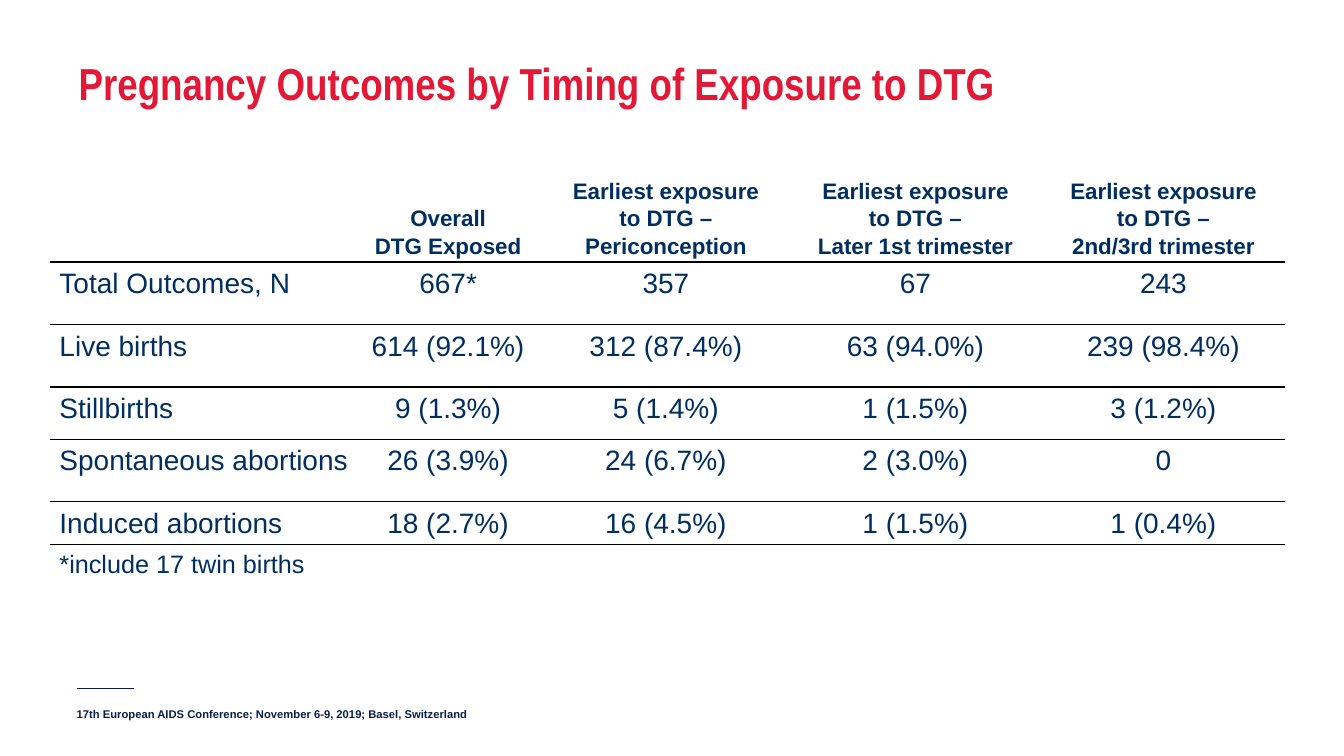
from lxml import etree
from pptx import Presentation
from pptx.dml.color import RGBColor
from pptx.enum.shapes import MSO_CONNECTOR
from pptx.enum.text import MSO_ANCHOR, PP_ALIGN
from pptx.oxml.ns import qn
from pptx.util import Emu, Pt

STRAIGHT = MSO_CONNECTOR.STRAIGHT
TOP, BOTTOM = MSO_ANCHOR.TOP, MSO_ANCHOR.BOTTOM
LEFT, CENTER = PP_ALIGN.LEFT, PP_ALIGN.CENTER

TITLE_ONLY_LAYOUT = 5
NO_STYLE_NO_GRID = "{2D5ABB26-0587-4C30-8999-92F81FD0307C}"
RED, BLUE, NAVY, BLACK = "E31836", "002F5F", "071D49", "000000"

COLUMN_WIDTHS = [301, 187, 245, 250, 242]
ROW_HEIGHTS = [118, 62, 62, 52, 62, 38, 66]
HEADINGS = [
    "",
    "Overall\vDTG Exposed",
    "Earliest exposure\vto DTG –\vPericonception",
    "Earliest exposure\vto DTG –\vLater 1st trimester",
    "Earliest exposure\vto DTG –\v2nd/3rd trimester",
]
OUTCOMES = [
    ["Total Outcomes, N", "667*", "357", "67", "243"],
    ["Live births", "614 (92.1%)", "312 (87.4%)", "63 (94.0%)", "239 (98.4%)"],
    ["Stillbirths", "9 (1.3%)", "5 (1.4%)", "1 (1.5%)", "3 (1.2%)"],
    ["Spontaneous abortions", "26 (3.9%)", "24 (6.7%)", "2 (3.0%)", "0"],
    ["Induced abortions", "18 (2.7%)", "16 (4.5%)", "1 (1.5%)", "1 (0.4%)"],
]
FOOTNOTE = ["*include 17 twin births", "", "", "", ""]


def px(length):
    """Turn px, 100 to the inch, into EMU."""
    return Emu(length * 9144)


def color(hex_string):
    return RGBColor.from_string(hex_string)


class SlideBuilder:
    def __init__(self, slide):
        self.slide = slide

    def format_font(self, paragraph, size, hex_string, bold=False, name="Arial"):
        font = paragraph.font
        font.name, font.size, font.bold = name, Pt(size), bold
        font.color.rgb = color(hex_string)

    def clear_margins(self, frame):
        frame.margin_left = frame.margin_right = 0
        frame.margin_top = frame.margin_bottom = 0
        frame.word_wrap = True

    def title(self, text, left, top, width, height):
        shape = self.slide.shapes.title
        shape.left, shape.top = px(left), px(top)
        shape.width, shape.height = px(width), px(height)
        frame = shape.text_frame
        frame.text = text
        frame.vertical_anchor = BOTTOM
        self.clear_margins(frame)
        paragraph = frame.paragraphs[0]
        paragraph.alignment = LEFT
        paragraph.line_spacing = Pt(30)
        self.format_font(paragraph, 32, RED, True, "Arial Narrow")

    def text(self, text, left, top, width, height):
        box = self.slide.shapes.add_textbox(px(left), px(top), px(width), px(height))
        self.clear_margins(box.text_frame)
        box.text_frame.text = text
        self.format_font(box.text_frame.paragraphs[0], 8, NAVY, True)

    def rule(self, left, top, width):
        line = self.slide.shapes.add_connector(
            STRAIGHT, px(left), px(top), px(left + width), px(top))
        line.line.color.rgb = color(NAVY)
        line.line.width = Pt(0.25)
        etree.SubElement(line._element.spPr, qn("a:effectLst"))

    def border(self, cell, side):
        properties = cell._tc.get_or_add_tcPr()
        line = etree.SubElement(properties, qn(f"a:{side}"), w=str(Pt(1)))
        fill = etree.SubElement(line, qn("a:solidFill"))
        etree.SubElement(fill, qn("a:srgbClr"), val=BLACK)

    def cell(self, cell, text, size, bold, is_label):
        cell.text = text
        cell.margin_left = cell.margin_right = px(1)
        cell.margin_top = cell.margin_bottom = px(3)
        cell.vertical_anchor = BOTTOM if bold else TOP
        paragraph = cell.text_frame.paragraphs[0]
        paragraph.alignment = LEFT if is_label else CENTER
        paragraph.line_spacing = 1.1
        if is_label:
            paragraph._p.get_or_add_pPr().set("marL", str(px(8)))
        self.format_font(paragraph, size, BLUE, bold)

    def table(self, rows, left, top):
        """Draw a heading row, outcome rows and a footnote row, ruled between."""
        last = len(rows) - 1
        table = self.slide.shapes.add_table(
            len(rows), len(COLUMN_WIDTHS), px(left), px(top),
            px(sum(COLUMN_WIDTHS)), px(sum(ROW_HEIGHTS))).table
        table.first_row = table.horz_banding = False
        table._tbl.tblPr.find(qn("a:tableStyleId")).text = NO_STYLE_NO_GRID
        for column, width in zip(table.columns, COLUMN_WIDTHS):
            column.width = px(width)
        for row, height in zip(table.rows, ROW_HEIGHTS):
            row.height = px(height)
        for row_index, texts in enumerate(rows):
            size = {0: 16, last: 18}.get(row_index, 20)
            for column_index, text in enumerate(texts):
                cell = table.cell(row_index, column_index)
                self.cell(cell, text, size, row_index == 0, column_index == 0)
                if row_index > 0:
                    self.border(cell, "lnT")
                if row_index < last:
                    self.border(cell, "lnB")
                cell.fill.background()
        table.cell(last, 0).merge(table.cell(last, 3))


def main():
    presentation = Presentation()
    presentation.slide_width, presentation.slide_height = px(1333), px(750)
    layout = presentation.slide_layouts[TITLE_ONLY_LAYOUT]
    builder = SlideBuilder(presentation.slides.add_slide(layout))
    builder.text("17th European AIDS Conference; November 6-9, 2019; Basel, Switzerland",
                 76, 702, 1185, 16)
    builder.rule(76, 683, 57)
    builder.title("Pregnancy Outcomes by Timing of Exposure to DTG", 78, 17, 1100, 92)
    builder.table([HEADINGS, *OUTCOMES, FOOTNOTE], 50, 142)
    presentation.save("out.pptx")


if __name__ == "__main__":
    main()
